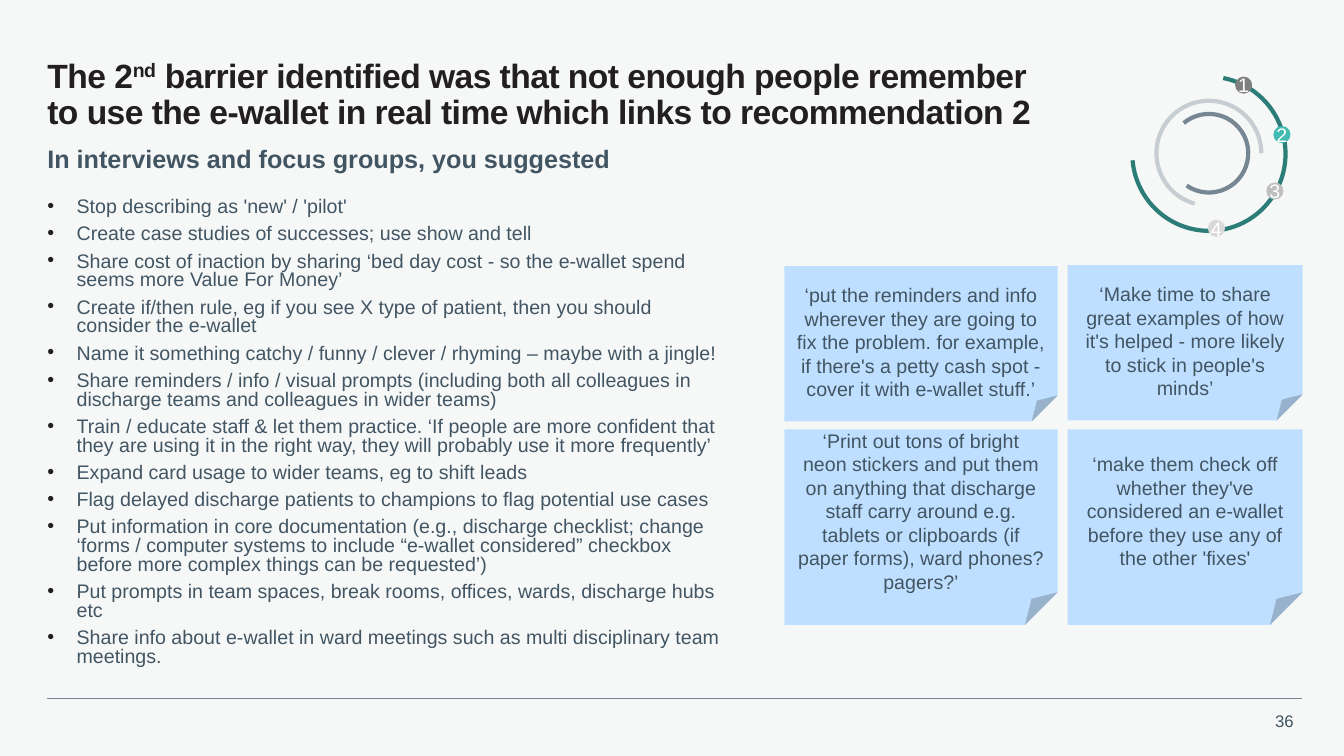
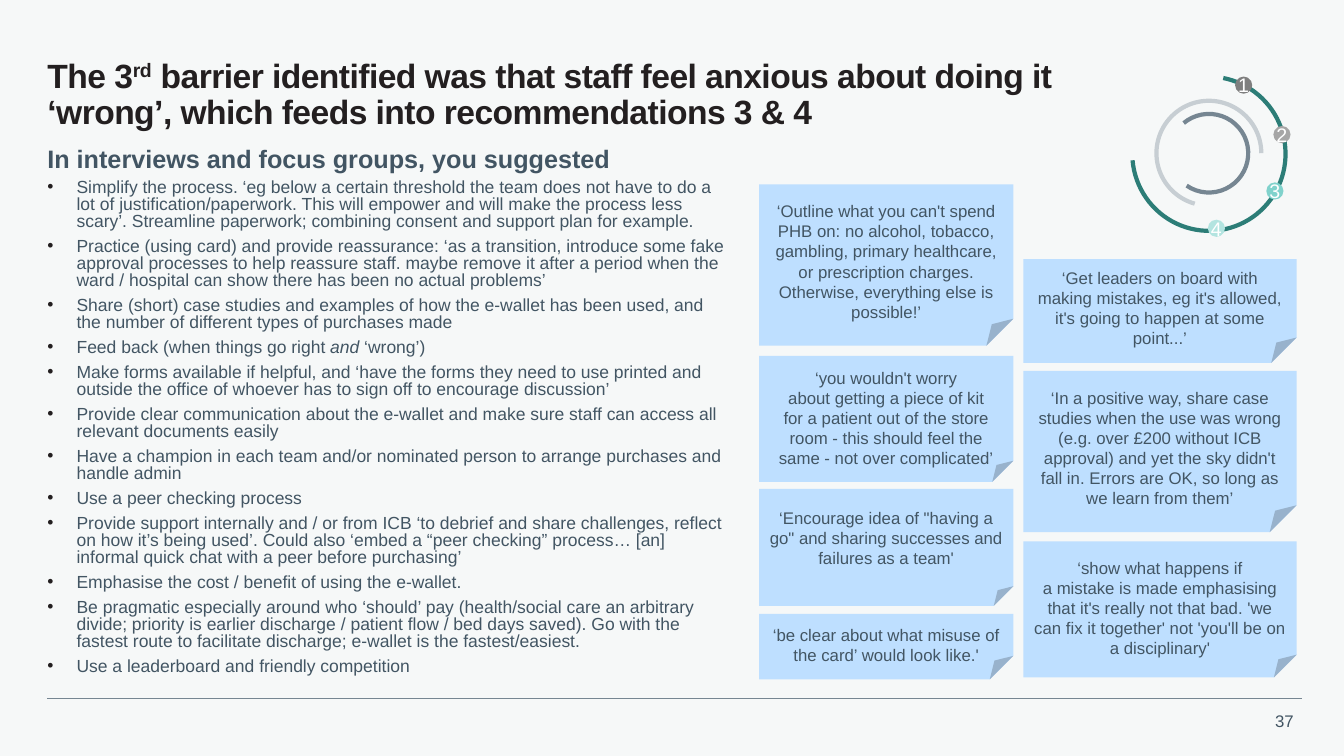
"""Build two slides on the barriers to using the e-wallet."""
from dataclasses import dataclass

from pptx import Presentation
from pptx.dml.color import RGBColor
from pptx.enum.shapes import MSO_CONNECTOR, MSO_SHAPE
from pptx.enum.text import MSO_ANCHOR, MSO_AUTO_SIZE, PP_ALIGN
from pptx.oxml import parse_xml
from pptx.oxml.ns import nsdecls, qn
from pptx.util import Emu, Pt

FONT = "Arial"
INK, SLATE, STEEL, SILVER = "231F20", "425563", "768692", "C7CED3"
TEAL, PAPER, NOTE_BLUE, WHITE = "2C7D77", "F6F8F8", "BEDFFF", "FFFFFF"
MARGIN = 47
SUBTITLE = "In interviews and focus groups, you suggested"
ARCS = [
    (1147, 100, 104, 104, 0, SILVER),
    (1160, 113, 78, 78, 124.5, STEEL),
    (1123, 76, 152, 153, 175.1, TEAL),
]
DOT_PLACES = [(1225, 76), (1263, 125), (1256, 181), (1198, 218)]


@dataclass
class Note:
    """A quote on a sticky note, optionally pushed down by one line."""
    top: int
    height: int
    text: str
    pushed: bool = True
    fold: int = 16667


REMEMBER_BULLETS = [
    "Stop describing as 'new' / 'pilot'",
    "Create case studies of successes; use show and tell",
    "Share cost of inaction by sharing ‘bed day cost - so the e-wallet spend seems more Value For Money’",
    "Create if/then rule, eg if you see X type of patient, then you should consider the e-wallet",
    "Name it something catchy / funny / clever / rhyming – maybe with a jingle!",
    "Share reminders / info / visual prompts (including both all colleagues in discharge teams "
    "and colleagues in wider teams)",
    "Train / educate staff & let them practice. ‘If people are more confident that they are using it "
    "in the right way, they will probably use it more frequently’",
    "Expand card usage to wider teams, eg to shift leads",
    "Flag delayed discharge patients to champions to flag potential use cases",
    "Put information in core documentation (e.g., discharge checklist; change ‘forms / computer systems "
    "to include “e-wallet considered” checkbox before more complex things can be requested’)",
    "Put prompts in team spaces, break rooms, offices, wards, discharge hubs etc",
    "Share info about e-wallet in ward meetings such as multi disciplinary team meetings.",
]
REMEMBER_NOTES = [
    (778, 271, [
        Note(264, 154, "‘put the reminders and info wherever they are going to fix the problem. "
             "for example, if there's a petty cash spot - cover it with e-wallet stuff.’"),
        Note(426, 194, "‘Print out tons of bright\nneon stickers and put them on anything that discharge "
             "staff carry around e.g. tablets or clipboards (if paper forms), ward phones? pagers?’", False),
    ]),
    (1059, 233, [
        Note(263, 154, "‘Make time to share great examples of how it's helped - more likely to stick "
             "in people's minds’"),
        Note(426, 194, "‘make them check off whether they've considered an e-wallet before they use "
             "any of the other 'fixes'", False),
    ]),
]
ANXIOUS_BULLETS = [
    "Simplify the process. ‘eg below a certain threshold the team does not have to do a lot of "
    "justification/paperwork. This will empower and will make the process less scary’. "
    "Streamline paperwork; combining consent and support plan for example.",
    "Practice (using card) and provide reassurance: ‘as a transition, introduce some fake approval "
    "processes to help reassure staff. maybe remove it after a period when the ward / hospital can show "
    "there has been no actual problems’",
    "Share (short) case studies and examples of how the e-wallet has been used, and the number of "
    "different types of purchases made",
    "Feed back (when things go right ^and^ ‘wrong’)",
    "Make forms available if helpful, and ‘have the forms they need to use printed and outside the office "
    "of whoever has to sign off to encourage discussion’",
    "Provide clear communication about the e-wallet and make sure staff can access all relevant "
    "documents easily",
    "Have a champion in each team and/or nominated person to arrange purchases and handle admin",
    "Use a peer checking process",
    "Provide support internally and / or from ICB ‘to debrief and share challenges, reflect on how it’s "
    "being used’. Could also ‘embed a “peer checking” process… [an] informal quick chat with a peer "
    "before purchasing’",
    "Emphasise the cost / benefit of using the e-wallet.",
    "Be pragmatic especially around who ‘should’ pay (health/social care an arbitrary divide; priority is "
    "earlier discharge / patient flow / bed days saved). Go with the fastest route to facilitate "
    "discharge; e-wallet is the fastest/easiest.",
    "Use a leaderboard and friendly competition",
]
ANXIOUS_NOTES = [
    (753, 252, [
        Note(183, 160, "‘Outline what you can't spend PHB on: no alcohol, tobacco, gambling, primary "
             "healthcare, or prescription charges. Otherwise, everything else is possible!’"),
        Note(353, 125, "‘you wouldn't worry\nabout getting a piece of kit\nfor a patient out of the store "
             "room - this should feel the same - not over complicated’"),
        Note(485, 116, """‘Encourage idea of "having a go" and sharing successes and failures as a team'""",
             False),
        Note(609, 65, "‘be clear about what misuse of the card’ would look like.'", fold=35900),
    ]),
    (1015, 271, [
        Note(257, 103, "‘Get leaders on board with making mistakes, eg it's allowed, it's going to happen "
             "at some point...’", fold=24400),
        Note(368, 160, "‘In a positive way, share case studies when the use was wrong (e.g. over £200 "
             "without ICB approval) and yet the sky didn't fall in. Errors are OK, so long as we learn "
             "from them’"),
        Note(537, 135, "‘show what happens if\na mistake is made emphasising that it's really not that bad. "
             "'we can fix it together' not 'you'll be on a disciplinary'"),
    ]),
]


def px(length):
    """Turn hundredths of an inch into EMU."""
    return Emu(length * 9144)


def rgb(value):
    """Turn a hex string into a colour."""
    return RGBColor.from_string(value)


def place(*lengths):
    """Turn left, top, width and height into EMU."""
    return [px(length) for length in lengths]


def set_insets(frame, left=0, top=0, right=0, bottom=0):
    """Set the four margins of a text frame."""
    frame.margin_left, frame.margin_top = px(left), px(top)
    frame.margin_right, frame.margin_bottom = px(right), px(bottom)


def set_guides(shape, **guides):
    """Set the adjustment guides of a preset shape."""
    values = shape.element.find(".//" + qn("a:avLst"))
    for guide in list(values):
        values.remove(guide)
    for name, value in guides.items():
        values.append(parse_xml(f'<a:gd {nsdecls("a")} name="{name}" fmla="val {value}"/>'))


def style_spans(para, size, color, bold=False):
    """Format every run of a paragraph."""
    for span in para.runs:
        span.font.name, span.font.size, span.font.bold = FONT, Pt(size), bold
        span.font.color.rgb = rgb(color)


def write_marked(para, text):
    """Write text with line breaks and return the runs marked by carets."""
    marked = []
    for index, piece in enumerate(text.split("^")):
        for row, line in enumerate(piece.split("\n")):
            if row:
                para.add_line_break()
            span = para.add_run()
            span.text = line
            if index % 2:
                marked.append(span)
    return marked


def style_master(deck):
    """Set the shared background and title style."""
    master = deck.slide_master
    master.background.fill.solid()
    master.background.fill.fore_color.rgb = rgb(PAPER)
    style = master.element.find(".//" + qn("p:titleStyle"))
    style.replace(style.find(qn("a:lvl1pPr")), parse_xml(
        f'<a:lvl1pPr {nsdecls("a")} algn="l"><a:lnSpc><a:spcPct val="90000"/></a:lnSpc><a:buNone/>'
        f'<a:defRPr sz="2400" b="1" spc="-40"><a:solidFill><a:srgbClr val="{INK}"/></a:solidFill>'
        f'<a:latin typeface="{FONT}"/></a:defRPr></a:lvl1pPr>'))


def add_title(page, text):
    """Fill the title placeholder, raising the marked ordinal."""
    title = page.shapes.title
    title.left, title.top, title.width, title.height = place(MARGIN, 47, 1074, 95)
    frame = title.text_frame
    frame.auto_size = MSO_AUTO_SIZE.NONE
    frame.vertical_anchor = MSO_ANCHOR.MIDDLE
    set_insets(frame)
    for span in write_marked(frame.paragraphs[0], text):
        span.font._element.set("baseline", "30000")


def add_label(page, text, box_place, size, bold=False, align=PP_ALIGN.LEFT, insets=(0, 0, 0, 0)):
    """Add one line of plain text."""
    frame = page.shapes.add_textbox(*place(*box_place)).text_frame
    frame.word_wrap = True
    set_insets(frame, *insets)
    frame.text = text
    frame.paragraphs[0].alignment = align
    style_spans(frame.paragraphs[0], size, SLATE, bold)


def add_footer(page, number):
    """Add the rule and the page number."""
    rule = page.shapes.add_connector(MSO_CONNECTOR.STRAIGHT, *place(MARGIN, 693, 1291, 693))
    rule.line.color.rgb = rgb(STEEL)
    rule.line.width = Pt(0.5)
    rule.element.spPr.append(parse_xml(f'<a:effectLst {nsdecls("a")}/>'))
    add_label(page, str(number), (1242, 700, 51, 30), 12, align=PP_ALIGN.RIGHT, insets=(10, 5, 10, 5))


def add_bullets(page, items, top, height, size):
    """Add the list of suggestions, with marked words in italics."""
    frame = page.shapes.add_textbox(*place(MARGIN, top, 674, height)).text_frame
    frame.word_wrap = True
    set_insets(frame)
    for index, item in enumerate(items):
        para = frame.add_paragraph() if index else frame.paragraphs[0]
        settings = para._p.get_or_add_pPr()
        settings.set("marL", str(px(29)))
        settings.set("indent", str(-px(29)))
        for bullet in (f'<a:buClr {nsdecls("a")}><a:srgbClr val="{INK}"/></a:buClr>',
                       f'<a:buFont {nsdecls("a")} typeface="{FONT}"/>',
                       f'<a:buChar {nsdecls("a")} char="•"/>'):
            settings.append(parse_xml(bullet))
        para.line_spacing = 0.8
        para.space_after = Pt(6)
        for span in write_marked(para, item):
            span.font.italic = True
        style_spans(para, size, SLATE)


def add_filled(shapes, kind, box_place, fill, text, size, color):
    """Add a filled shape with centred text."""
    shape = shapes.add_shape(kind, *place(*box_place))
    shape.shadow.inherit = False
    shape.fill.solid()
    shape.fill.fore_color.rgb = rgb(fill)
    shape.line.fill.background()
    frame = shape.text_frame
    frame.vertical_anchor = MSO_ANCHOR.MIDDLE
    frame.text = text
    for para in frame.paragraphs:
        para.alignment = PP_ALIGN.CENTER
        style_spans(para, size, color)
    return shape


def add_notes(page, columns, size):
    """Add the columns of sticky notes."""
    for left, width, notes in columns:
        for note in notes:
            shape = add_filled(page.shapes, MSO_SHAPE.FOLDED_CORNER, (left, note.top, width, note.height),
                               NOTE_BLUE, note.text, size, SLATE)
            set_guides(shape, adj=note.fold)
            shape.text_frame.word_wrap = True
            line_height = round(size * 1.6) if note.pushed else 0
            set_insets(shape.text_frame, 10, 5 + line_height, 10, 5)


def add_rings(page, dot_colors):
    """Add the ring emblem with its four numbered dots."""
    group = page.shapes.add_group_shape()
    for *box_place, turn, color in ARCS:
        arc = group.shapes.add_shape(MSO_SHAPE.ARC, *place(*box_place))
        arc.shadow.inherit = False
        set_guides(arc, adj1=6337600, adj2=0)
        arc.rotation = turn
        arc.fill.background()
        arc.line.color.rgb = rgb(color)
        arc.line.width = Pt(3)
    for number, (spot, color) in enumerate(zip(DOT_PLACES, dot_colors), 1):
        dot = add_filled(group.shapes, MSO_SHAPE.OVAL, (*spot, 17, 17), color, str(number), 14, WHITE)
        dot.text_frame.word_wrap = False
        set_insets(dot.text_frame)


def add_page(deck, number, title, bullets, bullet_layout, columns, note_size, dot_colors):
    """Add one barrier slide."""
    page = deck.slides.add_slide(deck.slide_layouts.get_by_name("Title Only"))
    add_footer(page, number)
    add_title(page, title)
    add_label(page, SUBTITLE, (MARGIN, 142, 562, 41), 18, bold=True)
    add_bullets(page, bullets, *bullet_layout)
    add_notes(page, columns, note_size)
    add_rings(page, dot_colors)


def main():
    """Build and save the deck."""
    deck = Presentation()
    deck.slide_width, deck.slide_height = px(1333), px(750)
    style_master(deck)
    add_page(deck, 36, "The 2^nd^ barrier identified was that not enough people remember\n"
             "to use the e-wallet in real time which links to recommendation 2",
             REMEMBER_BULLETS, (197, 472, 14), REMEMBER_NOTES, 14,
             ["7F7F7F", "42BBB2", "BFBFBF", "D9D9D9"])
    add_page(deck, 37, "The 3^rd^ barrier identified was that staff feel anxious about doing it "
             "‘wrong’, which feeds into recommendations 3 & 4",
             ANXIOUS_BULLETS, (179, 536, 12.5), ANXIOUS_NOTES, 12,
             ["7F7F7F", "A6A6A6", "80D2CC", "B3E4E0"])
    deck.save("out.pptx")


if __name__ == "__main__":
    main()
